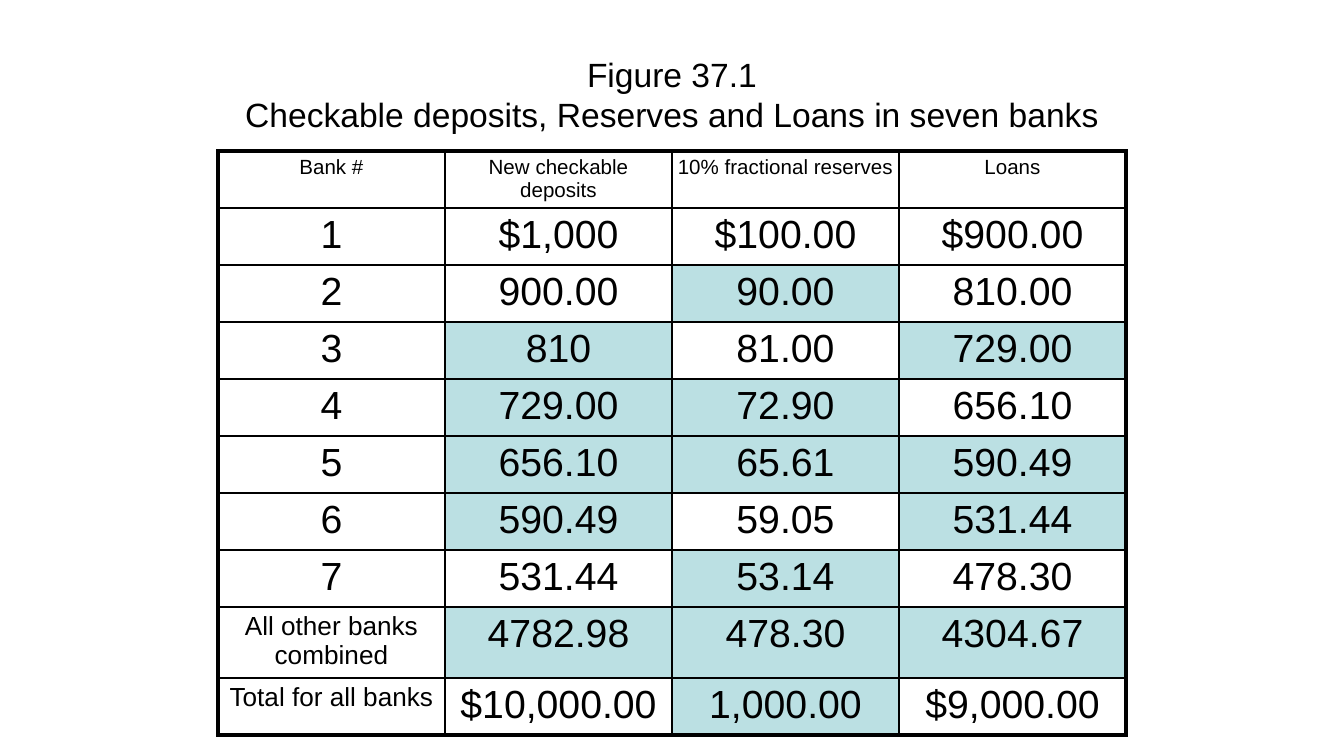
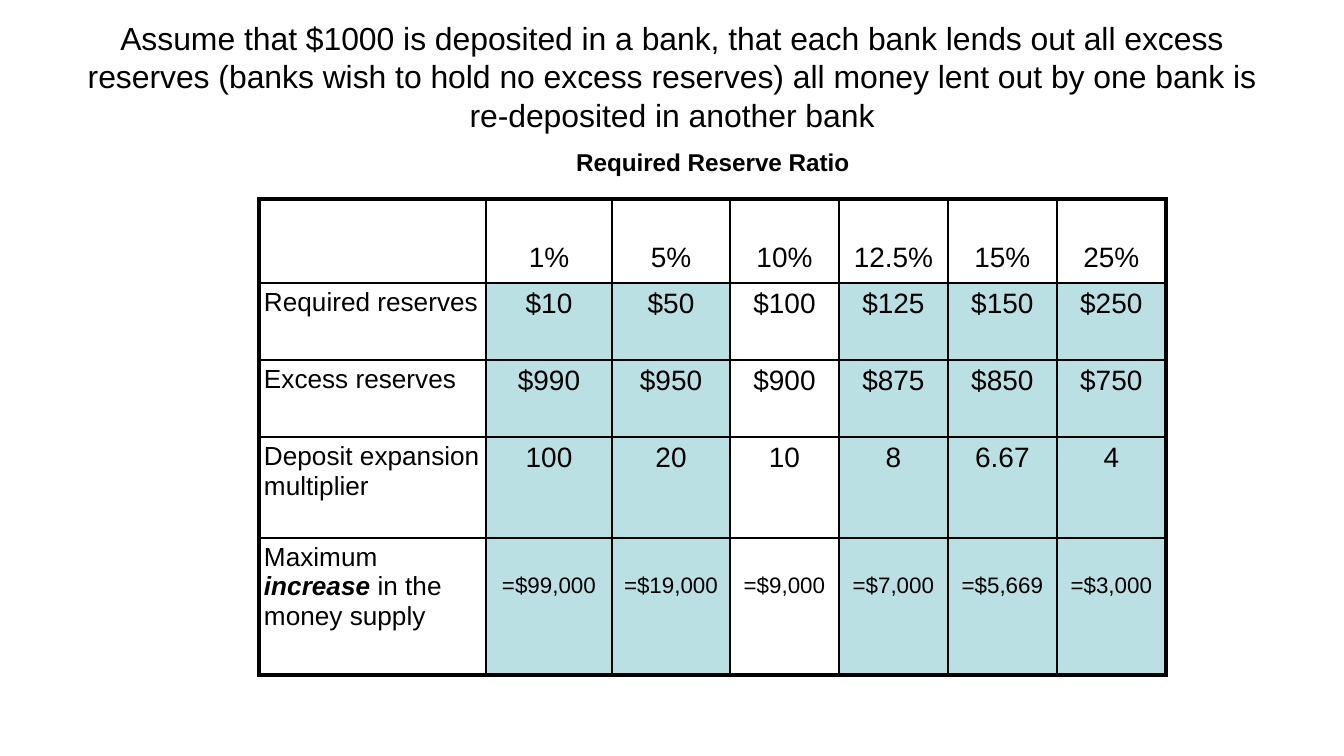
from lxml import etree
from pptx import Presentation, util as u
from pptx.dml.color import RGBColor
from pptx.enum import text as t
from pptx.oxml import ns

SCALE = 914400 / 134.4
COLOURS = {"ink": "000000", "shade": "BBE0E3", "paper": "FFFFFF"}
FONT = "Arial"
THIN, THICK = 1, 2.25
INSET = 5
SPACE_BEFORE = {11: 2, 12: 2, 13: 7, 14: 3, 15: 3, 21: 5}
SIDES = ("left", "top", "right", "bottom")

DEPOSITS = [
    ["Bank #", "New checkable deposits", "10% fractional reserves", "Loans"],
    ["1", "$1,000", "$100.00", "$900.00"],
    ["2", "900.00", "90.00", "810.00"],
    ["3", "810", "81.00", "729.00"],
    ["4", "729.00", "72.90", "656.10"],
    ["5", "656.10", "65.61", "590.49"],
    ["6", "590.49", "59.05", "531.44"],
    ["7", "531.44", "53.14", "478.30"],
    ["All other banks combined", "4782.98", "478.30", "4304.67"],
    ["Total for all banks", "$10,000.00", "1,000.00", "$9,000.00"],
]
SHADED_DEPOSITS = {2: [2], 3: [1, 3], 4: [1, 2], 5: [1, 2, 3], 6: [1, 3],
                   7: [2], 8: [1, 2, 3], 9: [2]}
RATIOS = [
    ["", "1%", "5%", "10%", "12.5%", "15%", "25%"],
    ["Required reserves", "$10", "$50", "$100", "$125", "$150", "$250"],
    ["Excess reserves", "$990", "$950", "$900", "$875", "$850", "$750"],
    ["Deposit expansion multiplier", "100", "20", "10", "8", "6.67", "4"],
    ["Maximum *increase* in the money supply", "=$99,000", "=$19,000",
     "=$9,000", "=$7,000", "=$5,669", "=$3,000"],
]
WORKED_EXAMPLE = 3


def px(length):
    return u.Emu(round(length * SCALE))


def set_all(target, formats):
    for name, value in formats.items():
        setattr(target, name, value)


def set_insets(target, **changes):
    insets = {side: INSET for side in SIDES} | changes
    set_all(target, {f"margin_{side}": px(inset) for side, inset in insets.items()})


def write(frame, content, size, align=t.PP_ALIGN.CENTER, bold=False):
    """Fill a text frame; words between asterisks become bold italic."""
    paragraph = frame.paragraphs[0]
    set_all(paragraph, {"alignment": align,
                        "space_before": u.Pt(SPACE_BEFORE.get(size, 0))})
    for number, part in enumerate(content.split("*")):
        stressed = number % 2 == 1
        lines = part.split("\n")
        for line_number, line in enumerate(lines):
            if line_number:
                paragraph.add_line_break()
            run = paragraph.add_run()
            run.text = line
            set_all(run.font, {"name": FONT, "size": u.Pt(size),
                               "bold": bold or stressed, "italic": stressed})
            run.font.color.rgb = RGBColor.from_string(COLOURS["ink"])


def add_titled_slide(deck, title, top, size):
    slide = deck.slides.add_slide(deck.slide_layouts[5])
    slide.background.fill.solid()
    slide.background.fill.fore_color.rgb = RGBColor.from_string(COLOURS["paper"])
    heading = slide.shapes.title
    set_all(heading, {"left": px(67), "top": px(top),
                      "width": px(1210), "height": px(126)})
    frame = heading.text_frame
    set_all(frame, {"word_wrap": True, "auto_size": t.MSO_AUTO_SIZE.NONE,
                    "vertical_anchor": t.MSO_ANCHOR.MIDDLE})
    set_insets(frame, left=7, top=7, right=7, bottom=7)
    write(frame, title, size)
    return slide


def draw_borders(cell, widths):
    properties = cell._tc.get_or_add_tcPr()
    for side, width in zip(SIDES, widths):
        line = etree.SubElement(properties, ns.qn(f"a:ln{side[0].upper()}"),
                                w=str(u.Pt(width)))
        fill = etree.SubElement(line, ns.qn("a:solidFill"))
        etree.SubElement(fill, ns.qn("a:srgbClr"), val=COLOURS["ink"])


def add_grid(slide, box, widths, heights, entries, is_shaded, cell_style):
    """Add a table with a heavy frame; cell_style gives (size, align, top inset)."""
    left, top = box
    table = slide.shapes.add_table(
        len(heights), len(widths), px(left), px(top),
        px(sum(widths)), px(sum(heights))).table
    set_all(table, {"first_row": False, "horz_banding": False})
    for column, width in zip(table.columns, widths):
        column.width = px(width)
    for row, height in zip(table.rows, heights):
        row.height = px(height)
    for r, entry_row in enumerate(entries):
        for c, entry in enumerate(entry_row):
            cell = table.cell(r, c)
            size, align, top_inset = cell_style(r, c)
            set_insets(cell, top=top_inset)
            if entry:
                write(cell.text_frame, entry, size, align)
            on_frame = (c == 0, r == 0, c == len(widths) - 1, r == len(heights) - 1)
            draw_borders(cell, [THICK if edge else THIN for edge in on_frame])
            if is_shaded(r, c):
                cell.fill.solid()
                cell.fill.fore_color.rgb = RGBColor.from_string(COLOURS["shade"])
            else:
                cell.fill.background()


def deposit_style(r, c):
    size = 11 if r == 0 else 14 if c == 0 and r >= 8 else 21
    return size, t.PP_ALIGN.CENTER, INSET


def ratio_style(r, c):
    if c == 0:
        return 14, t.PP_ALIGN.LEFT, INSET
    size, top_inset = {0: (15, 43), 4: (12, 35)}.get(r, (15, INSET))
    return size, t.PP_ALIGN.CENTER, top_inset


def add_ratio_caption(slide, box):
    frame = slide.shapes.add_textbox(*map(px, box)).text_frame
    set_all(frame, {"word_wrap": True,
                    "auto_size": t.MSO_AUTO_SIZE.SHAPE_TO_FIT_TEXT})
    set_insets(frame, left=7, top=7, right=7, bottom=7)
    write(frame, "Required Reserve Ratio", 13, bold=True)


def build_deposits_slide(deck):
    slide = add_titled_slide(
        deck, "Figure 37.1\nCheckable deposits, Reserves and Loans in seven banks",
        31, 18)
    add_grid(slide, (218, 151), [227] * 4, [57] * 8 + [71, 57], DEPOSITS,
             lambda r, c: c in SHADED_DEPOSITS.get(r, []), deposit_style)


def build_ratios_slide(deck):
    slide = add_titled_slide(
        deck, "Assume that $1000 is deposited in a bank, that each bank lends out "
        "all excess reserves (banks wish to hold no excess reserves) all money "
        "lent out by one bank is re-deposited in another bank", 13, 17.1)
    add_grid(slide, (259, 199), [227, 126, 118] + [109] * 4,
             [84, 77, 77, 101, 137], RATIOS,
             lambda r, c: r > 0 and c not in (0, WORKED_EXAMPLE), ratio_style)
    add_ratio_caption(slide, (396, 140, 633, 40))


def main():
    deck = Presentation()
    set_all(deck, {"slide_width": px(1344), "slide_height": px(756)})
    build_deposits_slide(deck)
    build_ratios_slide(deck)
    deck.save("out.pptx")


if __name__ == "__main__":
    main()
